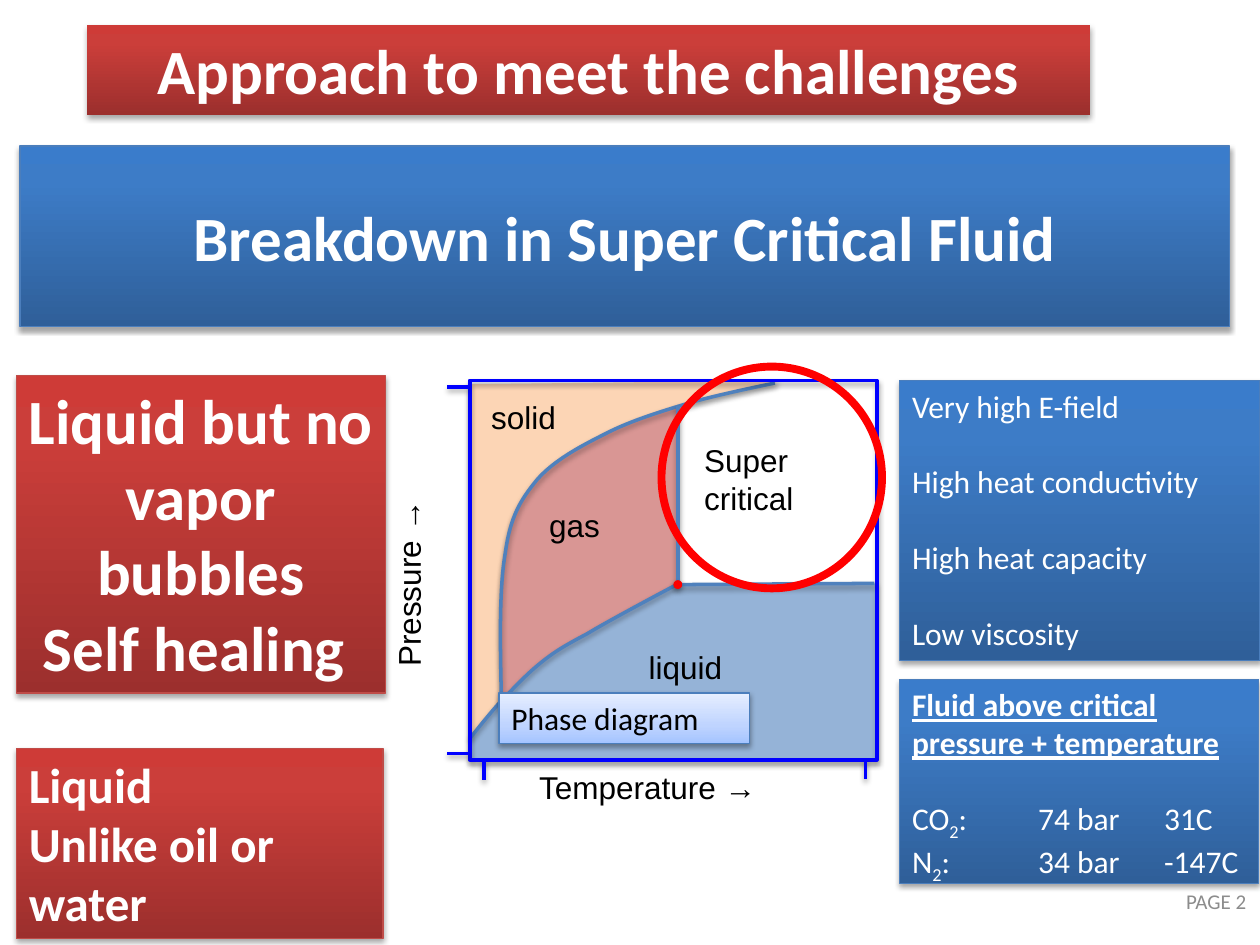
"""Build the slide on breakdown in super critical fluid, with its phase diagram."""
from copy import deepcopy
from lxml import etree
from pptx import Presentation
from pptx import util as u
from pptx.dml.color import RGBColor
from pptx.enum import shapes, text
from pptx.oxml import ns

COLOURS = {
    "white": "FFFFFF", "black": "000000", "grey": "8C8C8C", "red": "FF0000",
    "axis": "0000FF", "boundary": "4F81BD", "blue edge": "4B7EBC", "red edge": "BF4C48",
    "solid": "FCD5B5", "gas": "D99694", "liquid": "95B3D7",
}
GRADIENTS = {
    "blue": [(0, "2F5F99"), (0.8, "3D7CC7"), (1, "3A7CCB")],
    "red": [(0, "9C2F2D"), (0.8, "CB3E3A"), (1, "CE3B37")],
    "pale": [(0, "A4C4FF"), (0.35, "BFD4FF"), (1, "E6EEFF")],
}
COLOURS = {name: RGBColor.from_string(value) for name, value in COLOURS.items()}


def paint(shape, fill=None, line=None, width=0.75, gradient=None, shadow=True):
    if gradient:
        shape.fill.gradient()
        shape.fill.gradient_angle = 90
        stops = shape._element.spPr.find(".//" + ns.qn("a:gsLst"))
        stops.insert(1, deepcopy(stops[0]))
        for stop, (position, value) in zip(shape.fill.gradient_stops, GRADIENTS[gradient]):
            stop.position = position
            stop.color.rgb = RGBColor.from_string(value)
    elif fill:
        shape.fill.solid()
        shape.fill.fore_color.rgb = COLOURS[fill]
    elif hasattr(shape, "fill"):
        shape.fill.background()
    if line:
        shape.line.color.rgb = COLOURS[line]
        shape.line.width = u.Pt(width)
    else:
        shape.line.fill.background()
    effects = etree.SubElement(shape._element.spPr, ns.qn("a:effectLst"))
    if shadow:
        outer = etree.SubElement(effects, ns.qn("a:outerShdw"), blurRad="40000",
                                 dist="23000", dir="5400000", rotWithShape="0")
        black = etree.SubElement(outer, ns.qn("a:srgbClr"), val="000000")
        etree.SubElement(black, ns.qn("a:alpha"), val="35000")


def write(box, lines, size, font="Calibri", colour="white", bold=False, align="LEFT",
          anchor="TOP", gap=0, headings=0):
    frame = box.text_frame
    frame.word_wrap = True
    frame.vertical_anchor = getattr(text.MSO_ANCHOR, anchor)
    for index, line in enumerate(lines):
        para = frame.paragraphs[0] if index == 0 else frame.add_paragraph()
        para.alignment = getattr(text.PP_ALIGN, align)
        if index and (index == headings or not headings):
            para.space_before = u.Pt(gap)
        if "\t" in line:
            tabs = etree.SubElement(para._p.get_or_add_pPr(), ns.qn("a:tabLst"))
            for stop in (1, 2):
                etree.SubElement(tabs, ns.qn("a:tab"), pos=str(u.Inches(stop)), algn="l")
        para.font.size = u.Pt(size)
        para.font.name = font
        para.font.color.rgb = COLOURS[colour]
        para.font.bold = bold or index < headings
        para.font.underline = index < headings
        for part, words in enumerate(line.split("|")):
            span = para.add_run()
            span.text = words
            if part % 2:
                span.font._element.set("baseline", "-25000")


deck = Presentation()
deck.slide_width, deck.slide_height = u.Inches(10), u.Inches(7.5)
cell = deck.slide_width // 10
page = deck.slides.add_slide(deck.slide_layouts[5])
rectangle, ellipse = shapes.MSO_SHAPE.RECTANGLE, shapes.MSO_SHAPE.OVAL

title = page.shapes.title
title.left, title.top, title.width, title.height = (
    round(n * cell) for n in (0.16, 1.16, 9.6, 1.43))
paint(title, gradient="blue", line="blue edge")
write(title, ["Breakdown in Super Critical Fluid"], 36, bold=True, align="CENTER",
      anchor="MIDDLE")

triple, critical, end = (3.98, 5.56), (5.37, 4.64), (6.15, 3.04)
left, top, right, bottom = 3.73, 3.02, 6.96, 6.03
lower = [
    (3.73, 5.86), (3.81, 5.76), (3.89, 5.66), triple, (4.08, 5.46), (4.17, 5.36),
    (4.28, 5.27), (4.39, 5.18), (4.47, 5.13), (4.66, 5.03), (4.84, 4.92), critical, critical,
]
upper = [
    triple, (3.97, 5.12), (3.96, 4.68), (4.01, 4.39), (4.05, 4.1), (4.13, 3.97),
    (4.26, 3.81), (4.39, 3.66), (4.59, 3.55), (4.79, 3.45), (4.98, 3.35), (5.2, 3.28),
    (5.43, 3.21), (5.65, 3.14), end, end,
]
gas = upper[:12] + [(5.37, 3.23)] + [critical] * 2 + lower[:2:-1]
for bends, corners, style in [
    (lower[:4] + upper[1:], [(6.18, top), (left, 3.05)], {"fill": "solid"}),
    (gas, [triple], {"fill": "gas", "line": "gas"}),
    (lower, [(right, 4.63), (right, bottom), (left, bottom)], {"fill": "liquid"}),
    (lower, [], {"line": "boundary", "width": 2}),
    (upper, [], {"line": "boundary", "width": 2}),
]:
    points = [(x * cell, y * cell) for x, y in bends + corners]
    builder = page.shapes.build_freeform(*points[0])
    builder.add_line_segments(points[1:], close=bool(corners))
    region = builder.convert_to_shape()
    outline = region._element.spPr.find(".//" + ns.qn("a:path"))
    segments = outline.findall(ns.qn("a:lnTo"))
    for start in range(0, len(bends) - 1, 3):
        curve = etree.Element(ns.qn("a:cubicBezTo"))
        segments[start].addprevious(curve)
        for segment in segments[start:start + 3]:
            curve.append(segment[0])
            outline.remove(segment)
    paint(region, **style)

frame = page.shapes.add_shape(rectangle, *(round(n * cell) for n in
                                           (left, top, right - left, bottom - top)))
paint(frame, line="axis", width=2.25)
for ends, colour in [
    ((5.38, 3.22, 5.38, 4.62), "boundary"), ((5.37, 4.64, 6.94, 4.63), "boundary"),
    ((3.72, 3.07, 3.55, 3.07), "axis"), ((3.72, 5.98, 3.55, 5.98), "axis"),
    ((3.84, bottom, 3.84, 6.19), "axis"), ((6.87, bottom, 6.87, 6.18), "axis"),
]:
    rule = page.shapes.add_connector(shapes.MSO_CONNECTOR.STRAIGHT,
                                     *(round(n * cell) for n in ends))
    paint(rule, line=colour, width=2)

for place, style in [
    ((5.35, 4.61, 0.06, 0.06), {"fill": "red", "line": "red"}),
    ((5.25, 2.91, 1.75, 1.76), {"line": "red", "width": 4.5, "shadow": False}),
]:
    paint(page.shapes.add_shape(ellipse, *(round(n * cell) for n in place)), **style)

for place, lines in [
    ((5.05, 5.09, 1.24, 0.49), ["liquid"]),
    ((4.26, 3.97, 0.82, 0.49), ["gas"]),
    ((3.8, 3.11, 1.13, 0.49), ["solid"]),
    ((3.04, 3.47, 0.65, 1.92), ["Pressure →"]),
    ((4.18, 6.05, 2.51, 0.86), ["Temperature →"]),
    ((5.49, 3.45, 1.33, 0.86), ["Super", "critical"]),
]:
    label = page.shapes.add_textbox(*(round(n * cell) for n in place))
    write(label, lines, 18, font="Arial", colour="black")
    if lines == ["Pressure →"]:
        label.text_frame._txBody.bodyPr.set("vert", "vert270")

for place, gradient, edge, lines, size, style in [
    ((0.69, 0.2, 7.96, 0.71), "red", None, ["Approach to meet the challenges"], 36,
     {"bold": True, "align": "CENTER"}),
    ((0.13, 2.98, 2.93, 2.52), "red", "red edge",
     ["Liquid but no vapor bubbles", "Self healing "], 36, {"bold": True, "align": "CENTER"}),
    ((0.13, 5.94, 2.91, 1.51), "red", "red edge", ["Liquid", "Unlike oil or water"], 28,
     {"bold": True}),
    ((7.14, 3.02, 2.86, 2.22), "blue", "blue edge",
     ["Very high E-field", "High heat conductivity", "High heat capacity", "Low viscosity"],
     18, {"gap": 21.6}),
    ((7.14, 5.39, 2.85, 1.62), "blue", "blue edge",
     ["Fluid above critical", "pressure + temperature", "CO|2|:\t74 bar\t31C",
      "N|2|:\t34 bar\t-147C"], 18, {"gap": 21.6, "headings": 2}),
    ((3.96, 5.5, 1.99, 0.4), "pale", "blue edge", ["Phase diagram"], 18, {"colour": "black"}),
]:
    box = page.shapes.add_shape(rectangle, *(round(n * cell) for n in place))
    paint(box, gradient=gradient, line=edge)
    write(box, lines, size, **style)
    if size == 36:
        box.text_frame.margin_left = box.text_frame.margin_right = u.Inches(0.08)

number = page.shapes.add_textbox(*(round(n * cell) for n in (7.66, 6.95, 2.33, 0.4)))
write(number, ["PAGE 2"], 12, colour="grey", align="RIGHT", anchor="MIDDLE")

deck.save("out.pptx")
